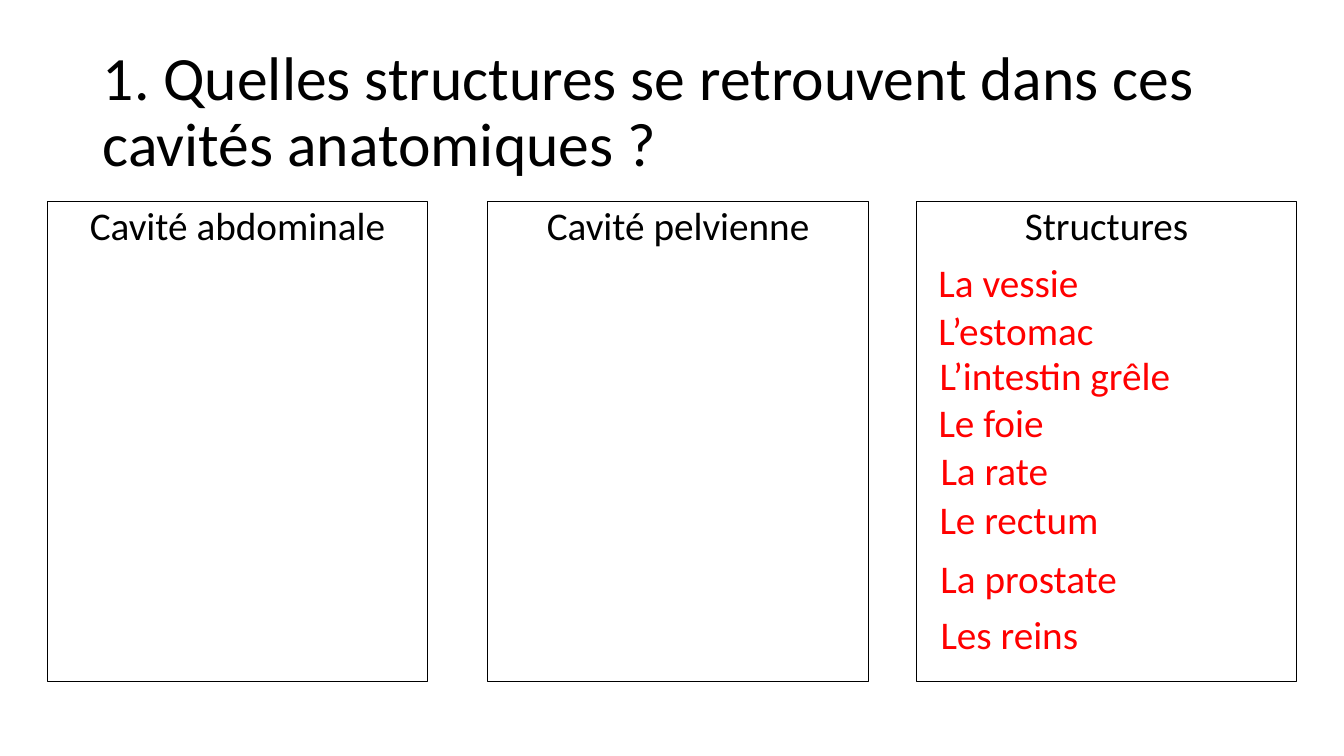
from pptx import Presentation
from pptx.dml.color import RGBColor
from pptx.enum.shapes import MSO_SHAPE
from pptx.enum.text import MSO_ANCHOR, MSO_AUTO_SIZE, PP_ALIGN
from pptx.util import Inches, Pt

TITLE = "1. Quelles structures se retrouvent dans ces cavités anatomiques ?"
BLACK, RED = "000000", "FF0000"

# Panels: heading, left
PANELS = [
    ("Cavité abdominale", 0.47),
    ("Cavité pelvienne", 4.84),
    ("Structures", 9.09),
]
PANEL_TOP, PANEL_W, PANEL_H = 2, 3.77, 4.76

# Movable labels: text, left, top, width
LABELS = [
    ("La vessie", 9.21, 2.51, 1.6),
    ("L’estomac", 9.21, 2.99, 1.76),
    ("L’intestin grêle", 9.22, 3.44, 2.67),
    ("Le foie", 9.21, 3.9, 1.25),
    ("La rate", 9.23, 4.38, 1.28),
    ("Le rectum", 9.22, 4.86, 1.8),
    ("La prostate", 9.23, 5.45, 1.97),
    ("Les reins", 9.23, 6.01, 1.58),
]
LABEL_H = 0.57


def rgb(color):
    return RGBColor.from_string(color)


def write(tf, text, size, color, align=PP_ALIGN.LEFT):
    p = tf.paragraphs[0]
    p.alignment = align
    r = p.add_run()
    r.text = text
    r.font.name = "Calibri"
    r.font.size = Pt(size)
    r.font.color.rgb = rgb(color)
    return p


prs = Presentation()
prs.slide_width, prs.slide_height = Inches(13.33), Inches(7.5)
slide = prs.slides.add_slide(prs.slide_layouts[5])

# Title
title = slide.shapes.title
title.left, title.top = Inches(0.92), Inches(0.4)
title.width, title.height = Inches(11.5), Inches(1.45)
tf = title.text_frame
tf.word_wrap = True
tf.auto_size = MSO_AUTO_SIZE.NONE
tf.vertical_anchor = MSO_ANCHOR.MIDDLE
write(tf, TITLE, 44, BLACK).line_spacing = 0.9

# Outlined panels
for heading, left in PANELS:
    sp = slide.shapes.add_shape(MSO_SHAPE.RECTANGLE, Inches(left), Inches(PANEL_TOP),
                                Inches(PANEL_W), Inches(PANEL_H))
    sp.shadow.inherit = False
    sp.fill.background()
    sp.line.color.rgb = rgb(BLACK)
    sp.line.width = Pt(0.75)
    tf = sp.text_frame
    tf.word_wrap = True
    tf.vertical_anchor = MSO_ANCHOR.TOP
    p = write(tf, heading, 28, BLACK, PP_ALIGN.CENTER)
    p.line_spacing = 0.9
    p.space_before = Pt(10)

# Labels to sort into the cavities
for text, left, top, width in LABELS:
    sp = slide.shapes.add_textbox(Inches(left), Inches(top), Inches(width), Inches(LABEL_H))
    tf = sp.text_frame
    tf.word_wrap = text == "L’intestin grêle"
    tf.auto_size = MSO_AUTO_SIZE.SHAPE_TO_FIT_TEXT
    write(tf, text, 28, RED)

prs.save("out.pptx")
